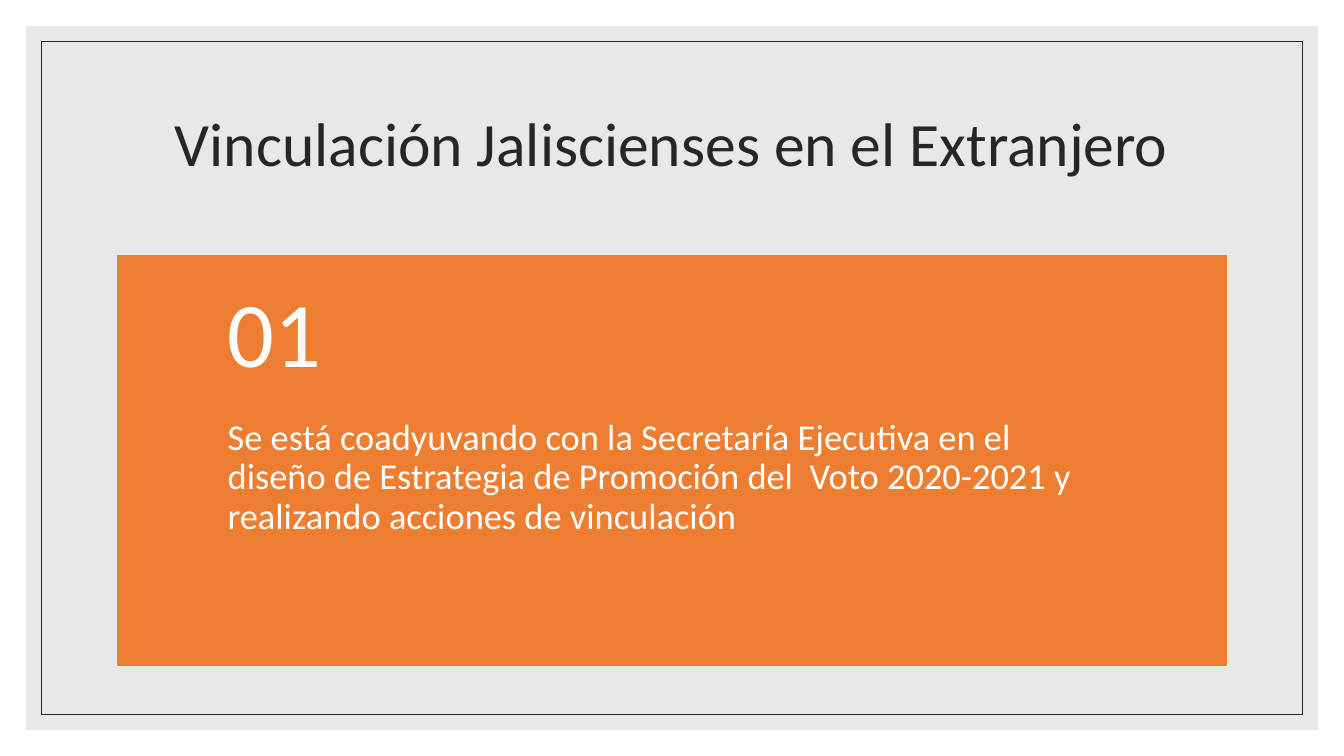
from dataclasses import dataclass
from typing import Optional

from lxml.etree import SubElement
from pptx import Presentation
from pptx.dml.color import RGBColor
from pptx.enum.shapes import MSO_SHAPE
from pptx.enum.text import MSO_ANCHOR, PP_ALIGN
from pptx.oxml.ns import qn
from pptx.util import Inches, Pt

WHITE = RGBColor(0xFF, 0xFF, 0xFF)
GREY = RGBColor(0xD9, 0xD9, 0xD9)
DARK = RGBColor(0x26, 0x26, 0x26)
ORANGE = RGBColor(0xED, 0x7D, 0x31)

FONT = "Calibri"
SLIDE_W, SLIDE_H = Inches(13.33), Inches(7.5)
COLS, ROWS = 160, 90


def cols(n: float) -> int:
    return round(SLIDE_W * n / COLS)


def rows(n: float) -> int:
    return round(SLIDE_H * n / ROWS)


@dataclass(frozen=True)
class Box:
    """An area of the slide in grid columns and rows."""
    col: float
    row: float
    width: float
    height: float

    def emu(self) -> tuple[int, int, int, int]:
        return cols(self.col), rows(self.row), cols(self.width), rows(self.height)


@dataclass(frozen=True)
class Panel:
    box: Box
    fill: Optional[RGBColor] = None
    opacity: int = 100
    line: Optional[RGBColor] = None
    line_pt: float = 1


@dataclass(frozen=True)
class Label:
    box: Box
    text: str
    size: float
    color: RGBColor = WHITE
    align: PP_ALIGN = PP_ALIGN.LEFT
    anchor: MSO_ANCHOR = MSO_ANCHOR.MIDDLE
    side: float = 13.1
    top: float = 2.16
    bottom: float = 2.16


def framed(inset: float) -> Box:
    """The slide's area reduced by the same inset on every side."""
    return Box(inset, inset, COLS - 2 * inset, ROWS - 2 * inset)


LEFT, WIDTH = 14, 132
CARD_TOP, NUMBER_H, BODY_H = 30.4, 19.52, 29.28

PANELS = [
    Panel(framed(0), fill=WHITE),
    Panel(framed(3.1), fill=GREY, opacity=60),
    Panel(framed(4.9), line=DARK, line_pt=0.5),
    Panel(Box(LEFT, CARD_TOP, WIDTH, NUMBER_H + BODY_H), fill=ORANGE, line=ORANGE),
]

LABELS = [
    Label(Box(LEFT, 8.4, WIDTH, 18), "Vinculación Jaliscienses en el Extranjero",
          44, DARK, PP_ALIGN.CENTER, side=1.2, top=0.6, bottom=0.6),
    Label(Box(LEFT, CARD_TOP + NUMBER_H, WIDTH, BODY_H),
          "Se está coadyuvando con la Secretaría Ejecutiva en el diseño de "
          "Estrategia de Promoción del  Voto 2020-2021 y realizando acciones "
          "de vinculación",
          26, anchor=MSO_ANCHOR.TOP, top=0, bottom=4.3),
    Label(Box(LEFT, CARD_TOP, WIDTH, NUMBER_H), "01", 66),
]


def draw_panel(s, panel: Panel) -> None:
    sp = s.shapes.add_shape(MSO_SHAPE.RECTANGLE, *panel.box.emu())
    sp.shadow.inherit = False
    if panel.fill is None:
        sp.fill.background()
    else:
        sp.fill.solid()
        sp.fill.fore_color.rgb = panel.fill
    if panel.opacity < 100:
        color = sp.fill._xPr.find(qn("a:solidFill"))[0]
        SubElement(color, qn("a:alpha")).set("val", str(panel.opacity * 1000))
    if panel.line is None:
        sp.line.fill.background()
    else:
        sp.line.color.rgb = panel.line
        sp.line.width = Pt(panel.line_pt)


def draw_label(s, label: Label) -> None:
    tf = s.shapes.add_textbox(*label.box.emu()).text_frame
    tf.word_wrap = True
    tf.vertical_anchor = label.anchor
    tf.margin_left = tf.margin_right = cols(label.side)
    tf.margin_top, tf.margin_bottom = rows(label.top), rows(label.bottom)
    tf.text = label.text
    p = tf.paragraphs[0]
    p.alignment = label.align
    p.line_spacing = 0.9
    r = p.runs[0]
    r.font.name = FONT
    r.font.size = Pt(label.size)
    r.font.color.rgb = label.color


def main() -> None:
    prs = Presentation()
    prs.slide_width, prs.slide_height = SLIDE_W, SLIDE_H
    s = prs.slides.add_slide(prs.slide_layouts[6])
    for panel in PANELS:
        draw_panel(s, panel)
    for label in LABELS:
        draw_label(s, label)
    prs.save("out.pptx")


if __name__ == "__main__":
    main()
